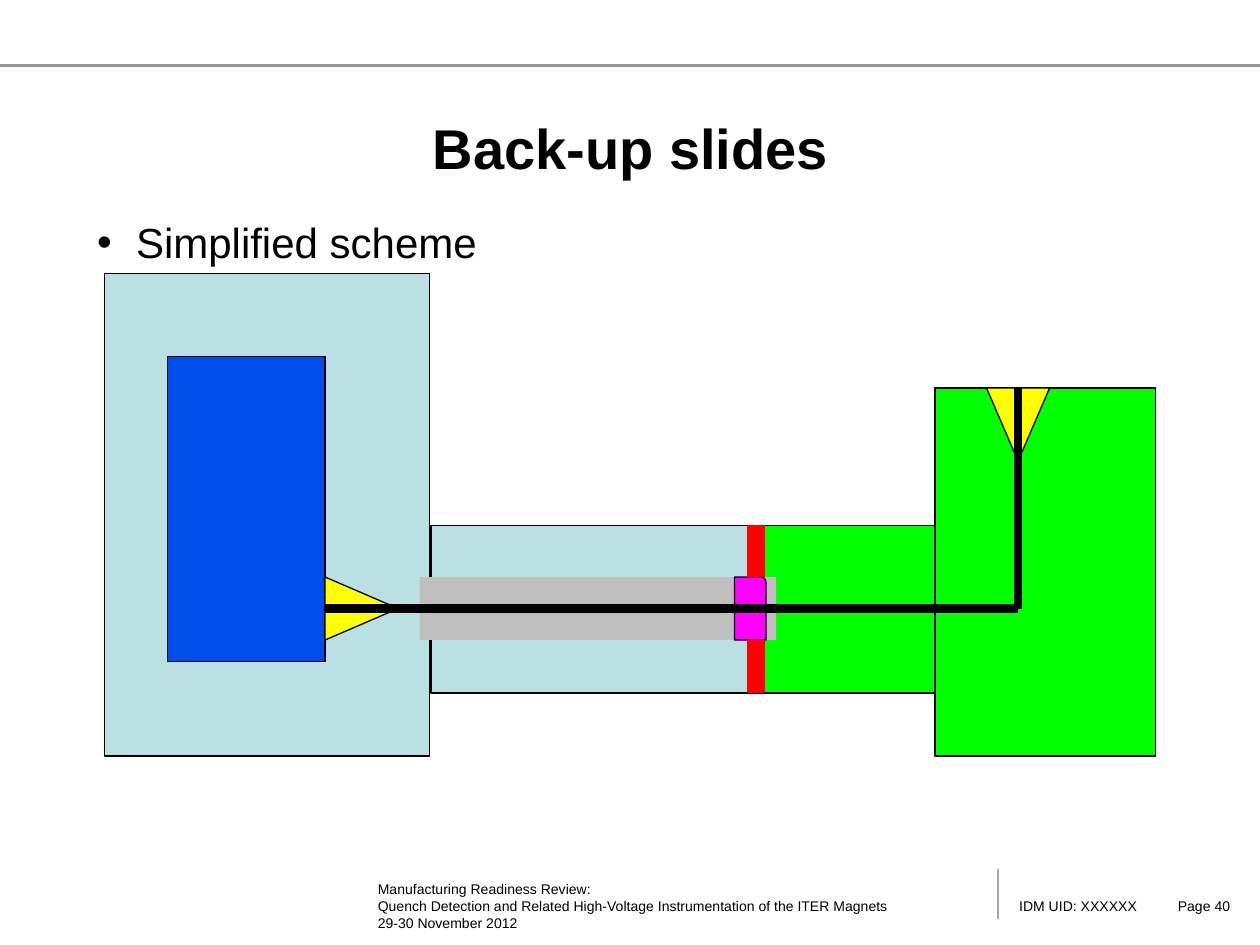
from pptx import Presentation, util as u
from pptx.dml.color import RGBColor
from pptx.enum import shapes, text
from pptx.oxml.ns import qn
from lxml import etree

THEME = dict(
    font="Arial", title=32, body=24, foot=8, edge=0.75,
    black="000000", pale="BBE0E3", blue="004EEA", green="00FF00",
    gray="BFBFBF", pink="FF00FF", red="FF0000", yellow="FFFF00",
    rule="969696", split="A6A6A6",
)
TITLE = "Back-up slides"
ITEMS = ["Simplified scheme"]
FOOT = [
    (9.25, 7.07, 0.64, 0.24, text.MSO_ANCHOR.MIDDLE, ["Page 40"]),
    (7.99, 7.07, 1.22, 0.24, text.MSO_ANCHOR.MIDDLE, ["IDM UID: XXXXXX"]),
    (2.9, 6.94, 5, 0.5, text.MSO_ANCHOR.TOP, [
        "Manufacturing Readiness Review: ",
        "Quench Detection and Related High-Voltage Instrumentation of the ITER Magnets",
        "29-30 November 2012",
    ]),
]
RULES = [
    (0, 0.52, 10, 0.52, "rule", 1.25),
    (7.92, 6.9, 7.92, 7.29, "split", 0.75),
]

KIND = shapes.MSO_SHAPE
AXIS, TOP, LOW = 4.83, 4.17, 5.5
WALL, DUCT, BOX, PIPE = 6, 3.42, 7.42, 0.5
COIL = 2.58
EXIT, ROOF = 8.08, 3.08
CONE = (0.5, 0.58)
HIGH, DEEP = AXIS - PIPE / 2, AXIS + PIPE / 2

PARTS = [
    (KIND.RECTANGLE, 0.83, 2.17, 2.58, 3.83, "pale", True, 0),
    (KIND.RECTANGLE, 1.33, 2.83, 1.25, 2.42, "blue", True, 0),
    (KIND.RECTANGLE, DUCT, TOP, WALL - DUCT, LOW - TOP, "pale", True, 0),
    (KIND.RECTANGLE, WALL, TOP, BOX - WALL, LOW - TOP, "green", True, 0),
    (KIND.RECTANGLE, BOX, ROOF, 1.75, 2.92, "green", True, 0),
    (KIND.RECTANGLE, 3.33, HIGH, 2.83, PIPE, "gray", False, 0),
    (KIND.ROUND_1_RECTANGLE, 5.83, HIGH, 0.25, PIPE, "pink", True, 0),
]
SEALS = [(WALL, TOP, WALL, HIGH, "red", 10), (WALL, DEEP, WALL, LOW, "red", 10)]
CONES = [
    (KIND.ISOSCELES_TRIANGLE, EXIT - CONE[0] / 2, ROOF, *CONE, "yellow", True, 180),
    (KIND.ISOSCELES_TRIANGLE, COIL + (CONE[1] - CONE[0]) / 2, AXIS - CONE[1] / 2,
     *CONE, "yellow", True, 90),
]
WIRES = [
    (EXIT, ROOF, EXIT, AXIS, "black", 5),
    (COIL, AXIS, EXIT, AXIS, "black", 5),
]


def tint(name):
    return RGBColor.from_string(THEME[name])


def place(shape, *box):
    shape.left, shape.top, shape.width, shape.height = map(u.Inches, box)


def write(para, words, size, bold=False):
    run = para.add_run()
    run.text = words
    font = run.font
    font.name, font.size, font.bold = THEME["font"], u.Pt(THEME[size]), bold
    font.color.rgb = tint("black")


def line(tree, x, y, to_x, to_y, color, width):
    wire = tree.add_connector(
        shapes.MSO_CONNECTOR.STRAIGHT, *map(u.Inches, (x, y, to_x, to_y)))
    wire.line.color.rgb = tint(color)
    wire.line.width = u.Pt(width)
    etree.SubElement(wire._element.spPr, qn("a:effectLst"))


def part(tree, kind, x, y, w, h, color, edged, turn):
    shape = tree.add_shape(kind, *map(u.Inches, (x, y, w, h)))
    shape.shadow.inherit = False
    shape.rotation = turn
    shape.fill.solid()
    shape.fill.fore_color.rgb = tint(color)
    if edged:
        shape.line.color.rgb = tint("black")
        shape.line.width = u.Pt(THEME["edge"])
    else:
        shape.line.fill.background()


def label(tree, x, y, w, h, anchor, lines):
    frame = tree.add_textbox(*map(u.Inches, (x, y, w, h))).text_frame
    frame.word_wrap = True
    frame.vertical_anchor = anchor
    para = frame.paragraphs[0]
    for i, words in enumerate(lines):
        if i:
            para.add_line_break()
        write(para, words, "foot")


def head(shape):
    place(shape, 0.63, 0.67, 8.75, 1)
    frame = shape.text_frame
    frame.vertical_anchor = text.MSO_ANCHOR.MIDDLE
    para = frame.paragraphs[0]
    para.alignment = text.PP_ALIGN.CENTER
    write(para, TITLE, "title", True)


def body(shape):
    place(shape, 0.67, 1.67, 8.75, 4.75)
    frame = shape.text_frame
    for i, words in enumerate(ITEMS):
        para = frame.add_paragraph() if i else frame.paragraphs[0]
        para.space_before = u.Pt(5 if i else 0)
        props = para._p.get_or_add_pPr()
        props.set("marL", str(u.Inches(0.31)))
        props.set("indent", str(u.Inches(-0.31)))
        etree.SubElement(props, qn("a:buChar")).set("char", "•")
        write(para, words, "body")


def main():
    deck = Presentation()
    deck.slide_width, deck.slide_height = u.Inches(10), u.Inches(7.5)
    slide = deck.slides.add_slide(deck.slide_layouts[1])
    tree = slide.shapes
    head(tree.title)
    body(slide.placeholders[1])
    for row in FOOT:
        label(tree, *row)
    for draw, rows in ((line, RULES), (part, PARTS), (line, SEALS),
                       (part, CONES), (line, WIRES)):
        for row in rows:
            draw(tree, *row)
    deck.save("out.pptx")


if __name__ == "__main__":
    main()
